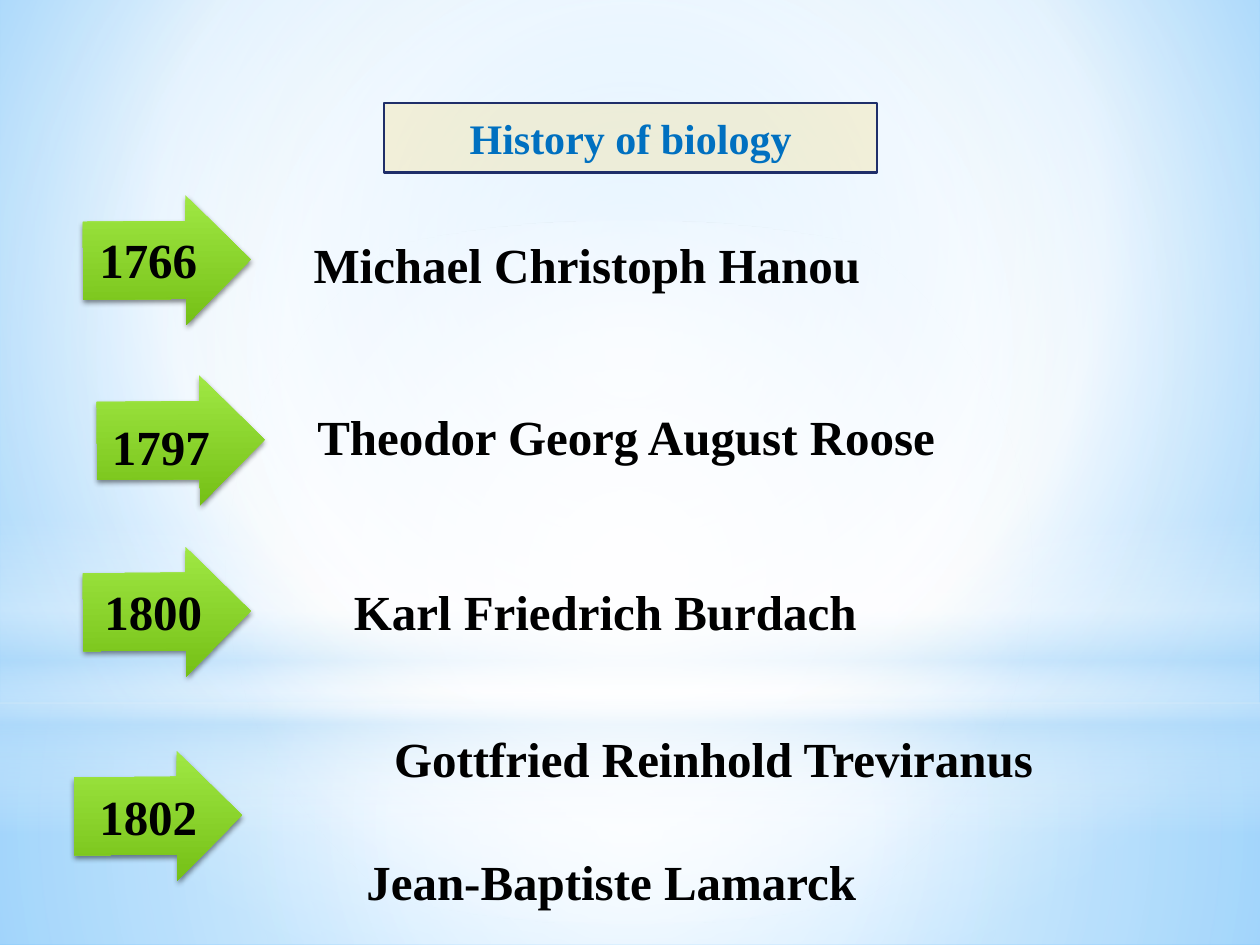
from dataclasses import dataclass
from typing import NamedTuple

from lxml import etree
from pptx import Presentation
from pptx.dml.color import RGBColor
from pptx.enum.shapes import MSO_SHAPE
from pptx.enum.text import MSO_ANCHOR, MSO_AUTO_SIZE, PP_ALIGN
from pptx.oxml import parse_xml
from pptx.oxml.ns import nsdecls, qn
from pptx.util import Inches, Pt

RECTANGLE, ELLIPSE, ARROW = MSO_SHAPE.RECTANGLE, MSO_SHAPE.OVAL, MSO_SHAPE.RIGHT_ARROW
CENTER, LEFT, JUSTIFY = PP_ALIGN.CENTER, PP_ALIGN.LEFT, PP_ALIGN.JUSTIFY
MIDDLE, TOP = MSO_ANCHOR.MIDDLE, MSO_ANCHOR.TOP
FIT_SHAPE = MSO_AUTO_SIZE.SHAPE_TO_FIT_TEXT
TITLE_ONLY = 5


@dataclass(frozen=True)
class Theme:
    font: str = "Times New Roman"
    title_size: float = 24
    body_size: float = 28
    ink: str = "000000"
    title_ink: str = "0070C0"
    title_fill: str = "FFC000"
    title_line: str = "1F2E69"
    white: str = "FFFFFF"
    sky: str = "B4DCFA"
    sky_center: str = "9ED5FF"
    sky_edge: str = "5BB9FF"
    arrow_light: str = "A0E844"
    arrow_dark: str = "75C016"


THEME = Theme()


class Stop(NamedTuple):
    position: int
    color: str
    opacity: int = 100


class Glow(NamedTuple):
    preset: MSO_SHAPE
    top: float
    height: float
    stops: list[Stop]
    radial: bool = True


class Label(NamedTuple):
    text: str
    left: float
    top: float
    width: float
    height: float = 0.57
    align: PP_ALIGN = LEFT
    spacing: float = 1.0


class Arrow(NamedTuple):
    left: float
    top: float
    year: Label


GLOWS = [
    Glow(RECTANGLE, 5.58, 1.92,
         [Stop(0, THEME.white, 91), Stop(37, THEME.white, 76), Stop(100, THEME.sky, 79)]),
    Glow(RECTANGLE, 0, 5.58,
         [Stop(0, THEME.white, 89), Stop(48, THEME.white, 62), Stop(100, THEME.sky, 79)]),
    Glow(RECTANGLE, 4.12, 2.5,
         [Stop(0, THEME.white, 0), Stop(29, THEME.white, 30), Stop(45, THEME.sky, 40),
          Stop(55, THEME.white, 26), Stop(65, THEME.sky, 60), Stop(100, THEME.white, 0)],
         radial=False),
    Glow(ELLIPSE, 1.75, 5.58, [Stop(0, THEME.white), Stop(56, THEME.white, 0)]),
]

ARROWS = [
    Arrow(0.66, 1.55, Label("1766", 0.69, 1.77, 2.13)),
    Arrow(0.77, 2.98, Label("1797", 0.79, 3.26, 0.99)),
    Arrow(0.66, 4.34, Label("1800", 0.73, 4.57, 1.14)),
    Arrow(0.59, 5.96, Label("1802", 0.69, 6.19, 1.06)),
]

BIOLOGISTS = [
    Label("Michael Christoph Hanou", 2.39, 1.81, 4.59),
    Label("Theodor Georg August Roose", 2.42, 2.94, 5.16, 0.73, JUSTIFY, 1.5),
    Label("Karl Friedrich Burdach", 2.71, 4.57, 4.23),
    Label("Gottfried Reinhold Treviranus", 3.03, 5.73, 5.33),
    Label("Jean-Baptiste Lamarck", 2.81, 6.71, 4.23),
]


def set_gradient(fill, properties, stops: list[Stop],
                 focus: tuple[int, int, int, int] | None = None) -> None:
    """Fill with a gradient, radial around focus (left, top, right, bottom in %) or downward."""
    fill.solid()
    stop_xml = "".join(
        f'<a:gs pos="{stop.position * 1000}"><a:srgbClr val="{stop.color}">'
        f'<a:alpha val="{stop.opacity * 1000}"/></a:srgbClr></a:gs>' for stop in stops)
    if focus:
        sides = " ".join(f'{side}="{value * 1000}"' for side, value in zip("ltrb", focus))
        direction = f'<a:path path="circle"><a:fillToRect {sides}/></a:path>'
    else:
        direction = '<a:lin ang="5400000" scaled="0"/>'
    gradient = parse_xml(f'<a:gradFill {nsdecls("a")} rotWithShape="1">'
                         f'<a:gsLst>{stop_xml}</a:gsLst>{direction}</a:gradFill>')
    properties.replace(properties.find(qn("a:solidFill")), gradient)


def write(frame, text: str, *, size: float = THEME.body_size, color: str = THEME.ink,
          align: PP_ALIGN = LEFT, anchor: MSO_ANCHOR = TOP, wrap: bool = True,
          spacing: float = 1.0) -> None:
    frame.word_wrap = wrap
    frame.vertical_anchor = anchor
    paragraph = frame.paragraphs[0]
    paragraph.alignment = align
    paragraph.line_spacing = spacing
    run = paragraph.add_run()
    run.text = text
    run.font.name = THEME.font
    run.font.size = Pt(size)
    run.font.bold = True
    run.font.color.rgb = RGBColor.from_string(color)


def add_plain_shape(slide, preset: MSO_SHAPE, left: float, top: float,
                    width: float, height: float):
    shape = slide.shapes.add_shape(preset, Inches(left), Inches(top),
                                   Inches(width), Inches(height))
    shape.line.fill.background()
    shape.shadow.inherit = False
    return shape


def draw_backdrop(slide) -> None:
    background = slide.background.fill
    background.solid()
    set_gradient(background, slide.element.find(".//" + qn("p:bgPr")),
                 [Stop(0, THEME.sky_center), Stop(60, THEME.white), Stop(100, THEME.sky_edge)],
                 (20, 10, 20, 60))
    for glow in GLOWS:
        shape = add_plain_shape(slide, glow.preset, 0, glow.top, 10, glow.height)
        set_gradient(shape.fill, shape.element.spPr, glow.stops,
                     (50, 50, 50, 50) if glow.radial else None)


def draw_title(slide) -> None:
    title = slide.shapes.title
    title.element.getparent().append(title.element)  # in front of the backdrop
    title.left, title.top = Inches(3.05), Inches(0.82)
    title.width, title.height = Inches(3.91), Inches(0.55)
    title.fill.solid()
    title.fill.fore_color.rgb = RGBColor.from_string(THEME.title_fill)
    fill_color = title.element.spPr.find(qn("a:solidFill"))[0]
    etree.SubElement(fill_color, qn("a:alpha"), val="15000")
    title.line.color.rgb = RGBColor.from_string(THEME.title_line)
    title.line.width = Pt(1.25)
    write(title.text_frame, "History of biology", size=THEME.title_size,
          color=THEME.title_ink, align=CENTER, anchor=MIDDLE)


def draw_label(slide, label: Label, wrap: bool) -> None:
    box = slide.shapes.add_textbox(Inches(label.left), Inches(label.top),
                                   Inches(label.width), Inches(label.height))
    box.text_frame.auto_size = FIT_SHAPE
    write(box.text_frame, label.text, align=label.align, wrap=wrap, spacing=label.spacing)


def draw_arrow(slide, arrow: Arrow) -> None:
    shape = add_plain_shape(slide, ARROW, arrow.left, arrow.top, 1.33, 1.03)
    shape.adjustments[0], shape.adjustments[1] = 0.6, 0.5
    shape.rotation = 359.6
    properties = shape.element.spPr
    set_gradient(shape.fill, properties,
                 [Stop(0, THEME.arrow_light), Stop(100, THEME.arrow_dark)])
    properties.find(qn("a:effectLst")).append(parse_xml(
        f'<a:outerShdw {nsdecls("a")} blurRad="{Pt(3.1)}" dist="{Pt(1.8)}" dir="5400000" '
        f'rotWithShape="0"><a:srgbClr val="{THEME.ink}"><a:alpha val="45000"/></a:srgbClr>'
        '</a:outerShdw>'))
    draw_label(slide, arrow.year, wrap=True)


def main() -> None:
    presentation = Presentation()
    presentation.slide_width, presentation.slide_height = Inches(10), Inches(7.5)
    slide = presentation.slides.add_slide(presentation.slide_layouts[TITLE_ONLY])
    draw_backdrop(slide)
    draw_title(slide)
    for arrow in ARROWS:
        draw_arrow(slide, arrow)
    for biologist in BIOLOGISTS:
        draw_label(slide, biologist, wrap=False)
    presentation.save("out.pptx")


if __name__ == "__main__":
    main()
